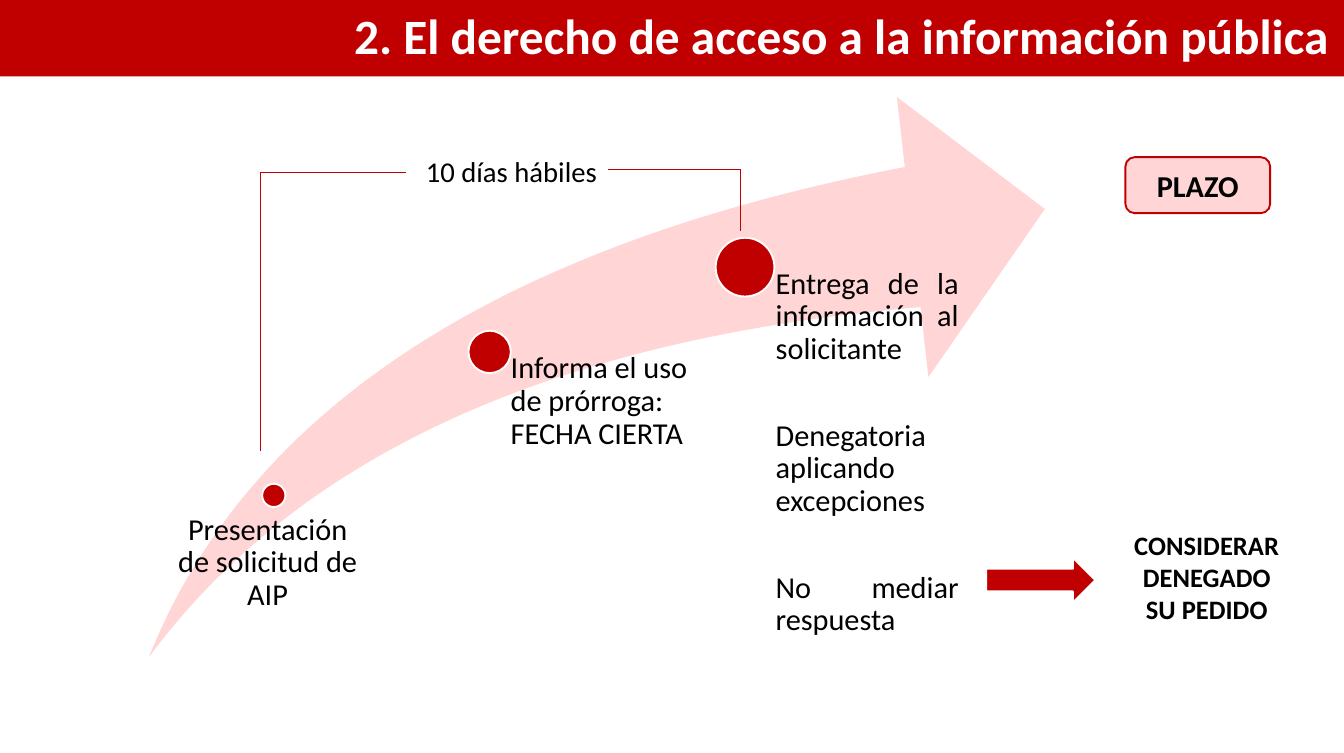
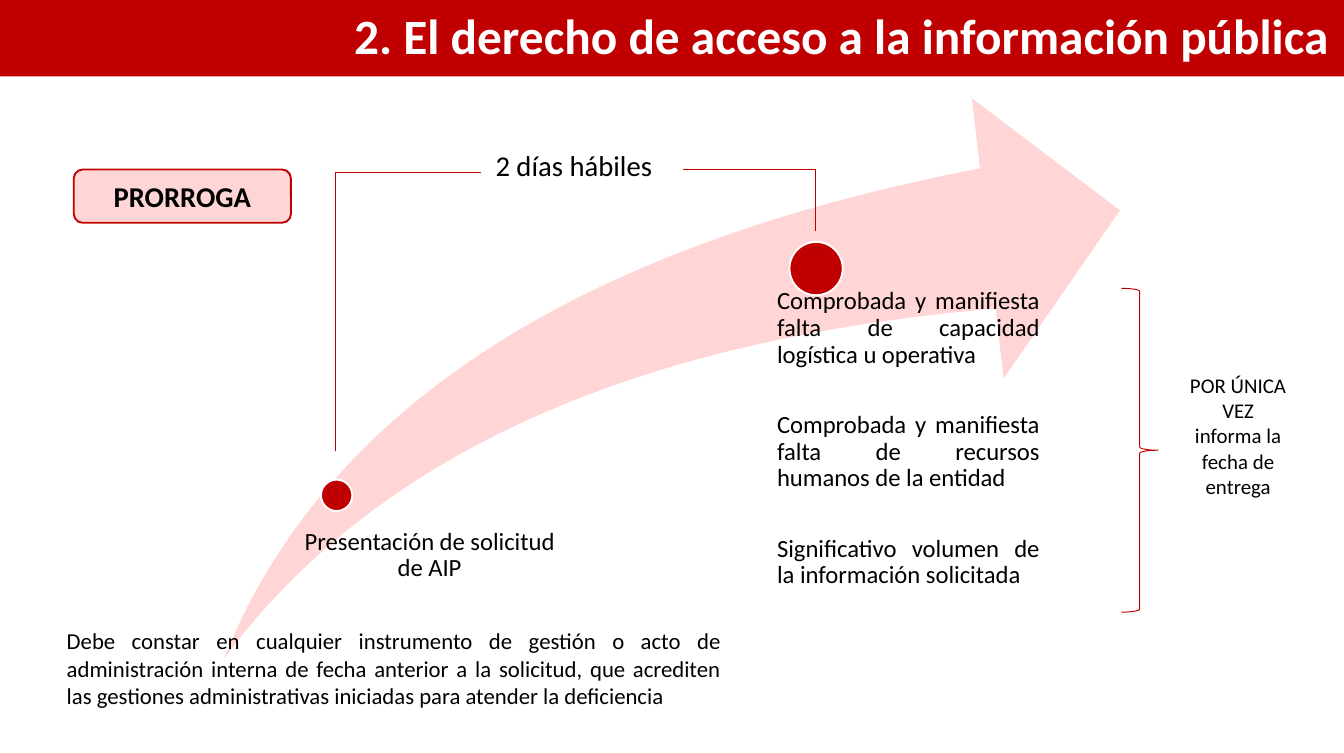
import pptx
import pptx.util
import pptx.dml.color
import pptx.enum.shapes
import pptx.enum.text
import pptx.oxml.ns
import lxml.etree

Inches = pptx.util.Inches
Pt = pptx.util.Pt
SHAPE = pptx.enum.shapes.MSO_SHAPE
ALIGN = pptx.enum.text.PP_ALIGN
ANCHOR = pptx.enum.text.MSO_ANCHOR

WIDTH, HEIGHT = 9.84, 5.51
RED, PINK, WHITE, BLACK = "C00000", "FFD5D5", "FFFFFF", "000000"
FONT = "Calibri"
TITLE = "2. El derecho de acceso a la información pública"


def color(value):
    return pptx.dml.color.RGBColor.from_string(value)


class Deck:
    """Holds the presentation, its style and the current slide."""

    def __init__(self):
        self.prs = pptx.Presentation()
        self.prs.slide_width = Inches(WIDTH)
        self.prs.slide_height = Inches(HEIGHT)

    def new_slide(self):
        self.s = self.prs.slides.add_slide(self.prs.slide_layouts[6])
        band = self.shape(SHAPE.RECTANGLE, 0, 0, WIDTH, 0.56, RED)
        self.fill_text(band.text_frame, [TITLE], 26, ALIGN.RIGHT, WHITE, True, 0.9)

    def shape(self, kind, x, y, w, h, fill, line=None, weight=1):
        sp = self.s.shapes.add_shape(kind, Inches(x), Inches(y), Inches(w), Inches(h))
        sp.shadow.inherit = False
        sp.fill.solid()
        sp.fill.fore_color.rgb = color(fill)
        if line:
            sp.line.color.rgb = color(line)
            sp.line.width = Pt(weight)
        else:
            sp.line.fill.background()
        sp.text_frame.vertical_anchor = ANCHOR.MIDDLE
        return sp

    def fill_text(self, tf, texts, size, align, ink=BLACK, bold=False, spacing=None, gap=0):
        tf.word_wrap = True
        for i, text in enumerate(texts):
            p = tf.add_paragraph() if i else tf.paragraphs[0]
            p.text = text
            p.alignment = align
            if spacing:
                p.line_spacing = spacing
            if i and gap:
                p.space_before = Pt(gap)
            p.font.size = Pt(size)
            p.font.name = FONT
            p.font.bold = bold
            p.font.color.rgb = color(ink)

    def text(self, x, y, w, h, texts, size, align=ALIGN.LEFT, bold=False):
        sp = self.s.shapes.add_textbox(Inches(x), Inches(y), Inches(w), Inches(h))
        self.fill_text(sp.text_frame, texts, size, align, bold=bold)

    def step(self, x, y, w, h, inset, texts, size, align=ALIGN.LEFT):
        """Label beside a milestone: tight lines, wide gaps between paragraphs."""
        sp = self.s.shapes.add_textbox(Inches(x), Inches(y), Inches(w), Inches(h))
        tf = sp.text_frame
        tf.margin_left = Inches(inset)
        tf.margin_top = tf.margin_right = tf.margin_bottom = 0
        self.fill_text(tf, texts, size, align, spacing=0.9, gap=round(1.77 * size, 1))

    def swoosh(self, x, y):
        sp = self.shape(SHAPE.SWOOSH_ARROW, x, y, 6.56, 4.1, PINK)
        sp.adjustments[0] = sp.adjustments[1] = 0.25

    def dot(self, x, y, d):
        self.shape(SHAPE.OVAL, x, y, d, d, RED, WHITE)

    def tag(self, x, y, w, h, text, size):
        sp = self.shape(SHAPE.ROUNDED_RECTANGLE, x, y, w, h, PINK, RED)
        self.fill_text(sp.text_frame, [text], size, ALIGN.CENTER, bold=True)

    def line(self, x1, y1, x2, y2):
        c = self.s.shapes.add_connector(
            pptx.enum.shapes.MSO_CONNECTOR.STRAIGHT,
            Inches(x1), Inches(y1), Inches(x2), Inches(y2))
        c.line.color.rgb = color(RED)
        c.line.width = Pt(0.5)
        lxml.etree.SubElement(c._element.spPr, pptx.oxml.ns.qn("a:effectLst"))

    def term(self, left, right, text, x, y):
        """Bracket over the arrow with the length of the term in its gap."""
        self.line(left, 1.26, left, 3.3)
        self.line(left, 1.26, left + 1.06, 1.26)
        self.line(right, 1.24, right, 1.69)
        self.line(right, 1.24, right - 0.97, 1.24)
        self.text(x, y, 1.47, 0.35, [text], 15.1)


def deadline_slide(deck):
    deck.new_slide()
    # Arrow with three milestones
    deck.swoosh(1.09, 0.71)
    deck.dot(1.92, 3.54, 0.17)
    deck.step(1.15, 3.76, 1.53, 1.19, 0.09,
              ["Presentación de solicitud de AIP"], 16, ALIGN.CENTER)
    deck.dot(3.43, 2.42, 0.31)
    deck.step(3.58, 2.58, 1.57, 2.23, 0.16,
              ["Informa el uso de prórroga: FECHA CIERTA"], 16)
    deck.dot(5.24, 1.74, 0.43)
    deck.step(5.45, 1.96, 1.57, 2.85, 0.23,
              ["Entrega de la información al solicitante",
               "Denegatoria aplicando excepciones",
               "No mediar respuesta"], 16, ALIGN.JUSTIFY)
    deck.term(1.91, 5.42, "10 días hábiles", 3.02, 1.08)
    # Consequence of no answer
    deck.shape(SHAPE.RIGHT_ARROW, 7.22, 4.08, 0.8, 0.33, RED, WHITE)
    deck.text(8.19, 3.82, 1.29, 0.81, ["CONSIDERAR DENEGADO SU PEDIDO"],
              14, ALIGN.CENTER, bold=True)
    deck.tag(8.24, 1.15, 1.06, 0.41, "PLAZO", 16)


def extension_slide(deck):
    deck.new_slide()
    # Arrow with two milestones
    deck.swoosh(1.64, 0.72)
    deck.dot(2.35, 3.51, 0.23)
    deck.step(2.02, 3.87, 2.13, 0.55, 0.12,
              ["Presentación de solicitud de AIP"], 13, ALIGN.CENTER)
    deck.dot(5.78, 1.77, 0.39)
    deck.step(5.48, 2.11, 2.13, 2.71, 0.21,
              ["Comprobada y manifiesta falta de capacidad logística u operativa",
               "Comprobada y manifiesta falta de recursos humanos de la entidad",
               "Significativo volumen de la información solicitada"],
              13, ALIGN.JUSTIFY)
    deck.term(2.46, 5.97, "2 días hábiles", 3.53, 1.03)
    # Brace with the single notice
    deck.shape(SHAPE.RIGHT_BRACE, 8.21, 2.11, 0.27, 2.37, WHITE, RED, 0.5)
    deck.text(8.57, 2.68, 0.99, 1.03,
              ["POR ÚNICA VEZ", "informa la fecha de entrega"], 11, ALIGN.CENTER)
    deck.tag(0.54, 1.24, 1.59, 0.39, "PRORROGA", 15.1)
    # Footnote
    deck.text(0.39, 4.54, 4.99, 0.96,
              ["Debe constar en cualquier instrumento de gestión o acto de "
               "administración interna de fecha anterior a la solicitud, que "
               "acrediten las gestiones administrativas iniciadas para atender "
               "la deficiencia"], 12, ALIGN.JUSTIFY)


def main():
    deck = Deck()
    deadline_slide(deck)
    extension_slide(deck)
    deck.prs.save("out.pptx")


if __name__ == "__main__":
    main()
